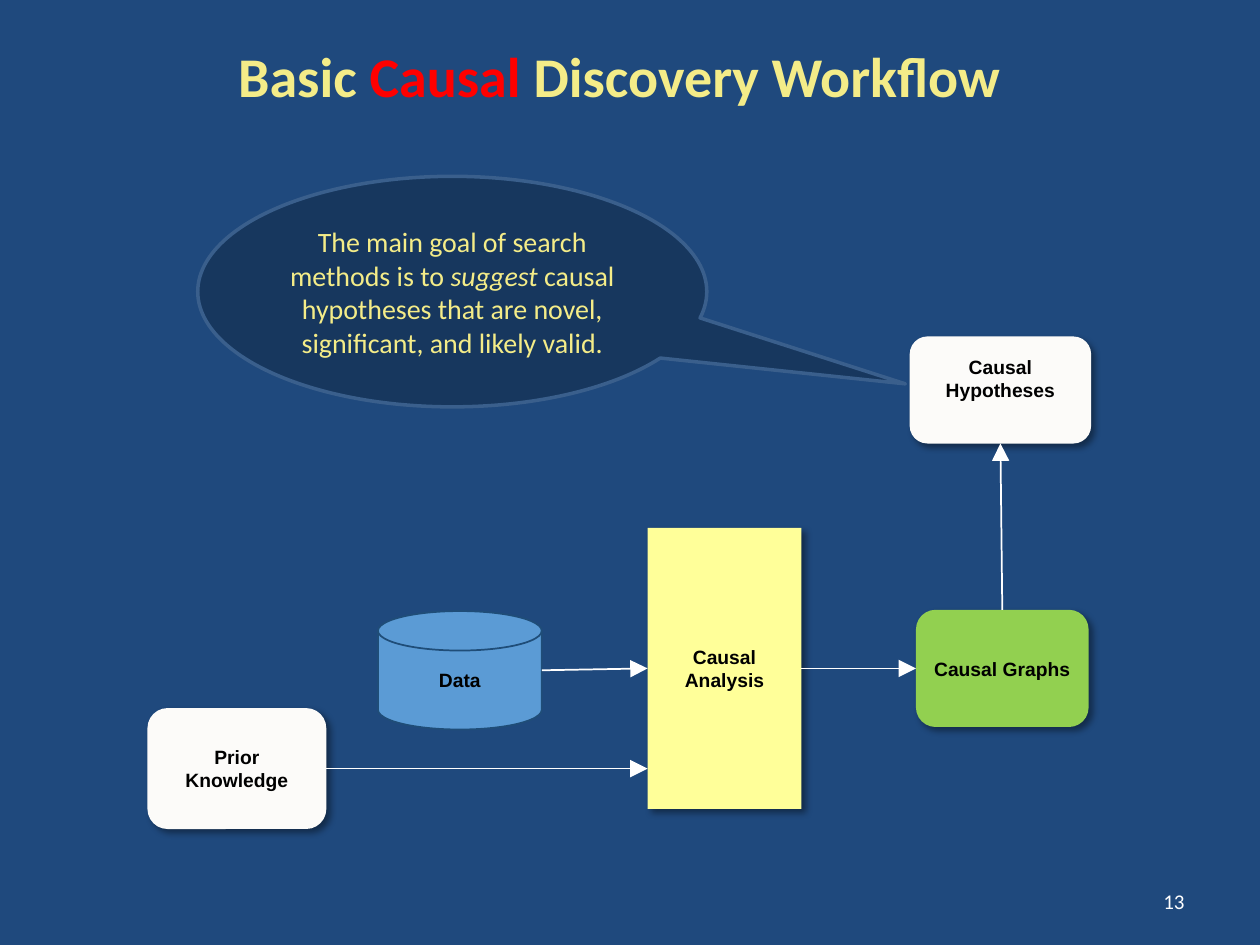
import pptx
import pptx.util
import pptx.dml.color
import pptx.enum.shapes
import pptx.enum.text
import pptx.oxml
import pptx.oxml.ns

SHAPE = pptx.enum.shapes.MSO_SHAPE
ALIGN = pptx.enum.text.PP_ALIGN
IN, PT = pptx.util.Inches, pptx.util.Pt
TOP, LEFT, BOTTOM, RIGHT = range(4)
W, H = 10, 7.5
CREAM, WHITE = "F4EC88", "FFFFFF"

TITLE = [("Basic ", {}), ("Causal", {"color": "FF0000"}), (" Discovery Workflow", {})]
GOAL = [
    ("The main goal of search methods is to ", {}),
    ("suggest", {"italic": True}),
    (" causal hypotheses that are novel, significant, and likely valid.", {}),
]
TITLE_FONT = {"name": "Calibri", "size": PT(32), "bold": True, "color": CREAM}
GOAL_FONT = {"name": "Calibri", "size": PT(16), "color": CREAM}
NODE_FONT = {"name": "Arial", "size": PT(11), "bold": True, "color": "000000"}
NUMBER_FONT = {"name": "Calibri", "size": PT(12), "color": WHITE}

NODES = {
    "graphs": (["Causal Graphs"], SHAPE.ROUNDED_RECTANGLE, "92D050", (7.27, 4.84, 1.37, 0.93)),
    "prior": (["Prior Knowledge"], SHAPE.ROUNDED_RECTANGLE, "FCFBF9", (1.17, 5.62, 1.42, 0.96)),
    "analysis": (["Causal", "Analysis"], SHAPE.RECTANGLE, "FFFF99", (5.14, 4.19, 1.22, 2.23)),
    "hypotheses": (["Causal Hypotheses"], SHAPE.ROUNDED_RECTANGLE, "FCFBF9", (7.22, 2.67, 1.44, 0.85)),
    "data": (["Data"], SHAPE.FLOWCHART_MAGNETIC_DISK, "5B9BD5", (3, 4.85, 1.3, 0.94)),
}
ARROWS = [
    ("graphs", TOP, "hypotheses", BOTTOM),
    ("analysis", RIGHT, "graphs", LEFT),
    ("data", RIGHT, "analysis", LEFT),
    ("prior", RIGHT, "analysis", None),
]
PRIOR_ENTRY = (5.14, 6.1)

NS = pptx.oxml.ns.nsdecls("a")
SHADOW = (
    f'<a:effectLst {NS}><a:outerShdw blurRad="{PT(4)}" dist="{PT(3)}" dir="2700000" '
    'algn="tl" rotWithShape="0"><a:srgbClr val="000000"><a:alpha val="40000"/>'
    "</a:srgbClr></a:outerShdw></a:effectLst>"
)
NO_EFFECT = f"<a:effectLst {NS}/>"
ARROWHEAD = f'<a:tailEnd {NS} type="triangle" w="lg" len="lg"/>'


def rgb(value):
    return pptx.dml.color.RGBColor.from_string(value)


def inches(values):
    return [IN(v) for v in values]


def add_xml(parent, xml):
    parent.append(pptx.oxml.parse_xml(xml))


def write(sp, paragraphs, font, align=ALIGN.CENTER):
    tf = sp.text_frame
    tf.word_wrap = True
    tf.vertical_anchor = pptx.enum.text.MSO_ANCHOR.MIDDLE
    for i, runs in enumerate(paragraphs):
        p = tf.add_paragraph() if i else tf.paragraphs[0]
        p.alignment = align
        for text, change in runs:
            r = p.add_run()
            r.text = text
            for key, value in {**font, **change}.items():
                if key == "color":
                    r.font.color.rgb = rgb(value)
                else:
                    setattr(r.font, key, value)


def add_shape(s, kind, box, fill, line=None, width=1):
    sp = s.shapes.add_shape(kind, *inches(box))
    sp.fill.solid()
    sp.fill.fore_color.rgb = rgb(fill)
    if line:
        sp.line.color.rgb = rgb(line)
        sp.line.width = PT(width)
        sp.shadow.inherit = False
    else:
        sp.line.fill.background()
        add_xml(sp._element.spPr, SHADOW)
    return sp


def add_arrow(s, start, start_side, end, end_side):
    c = s.shapes.add_connector(
        pptx.enum.shapes.MSO_CONNECTOR.STRAIGHT, 0, 0, *inches(PRIOR_ENTRY))
    c.begin_connect(start, start_side)
    if end_side is not None:
        c.end_connect(end, end_side)
    c.line.color.rgb = rgb(WHITE)
    c.line.width = PT(1)
    add_xml(c.line._get_or_add_ln(), ARROWHEAD)
    add_xml(c._element.spPr, NO_EFFECT)


def main():
    prs = pptx.Presentation()
    prs.slide_width, prs.slide_height = inches((W, H))
    s = prs.slides.add_slide(prs.slide_layouts[6])
    s.background.fill.solid()
    s.background.fill.fore_color.rgb = rgb("1F497D")

    write(s.shapes.add_textbox(*inches((0, 0.08, 9.83, 1.03))), [TITLE], TITLE_FONT)

    nodes = {}
    for name, (lines, kind, fill, box) in NODES.items():
        line = "1F4D78" if name == "data" else None
        nodes[name] = add_shape(s, kind, box, fill, line)
        write(nodes[name], [[(text, {})] for text in lines], NODE_FONT)
    nodes["hypotheses"].text_frame.margin_bottom = IN(0.23)

    for start, start_side, end, end_side in ARROWS:
        add_arrow(s, nodes[start], start_side, nodes[end], end_side)

    callout = add_shape(s, SHAPE.OVAL_CALLOUT, (1.57, 1.4, 4.04, 1.83), "17375E", "3A5F8C", 2)
    callout.adjustments[0], callout.adjustments[1] = 0.89, 0.4
    write(callout, [GOAL], GOAL_FONT)

    number = s.shapes.add_textbox(*inches((7.17, 6.95, 2.33, 0.4)))
    write(number, [[("13", {})]], NUMBER_FONT, ALIGN.RIGHT)
    prs.save("out.pptx")


if __name__ == "__main__":
    main()
